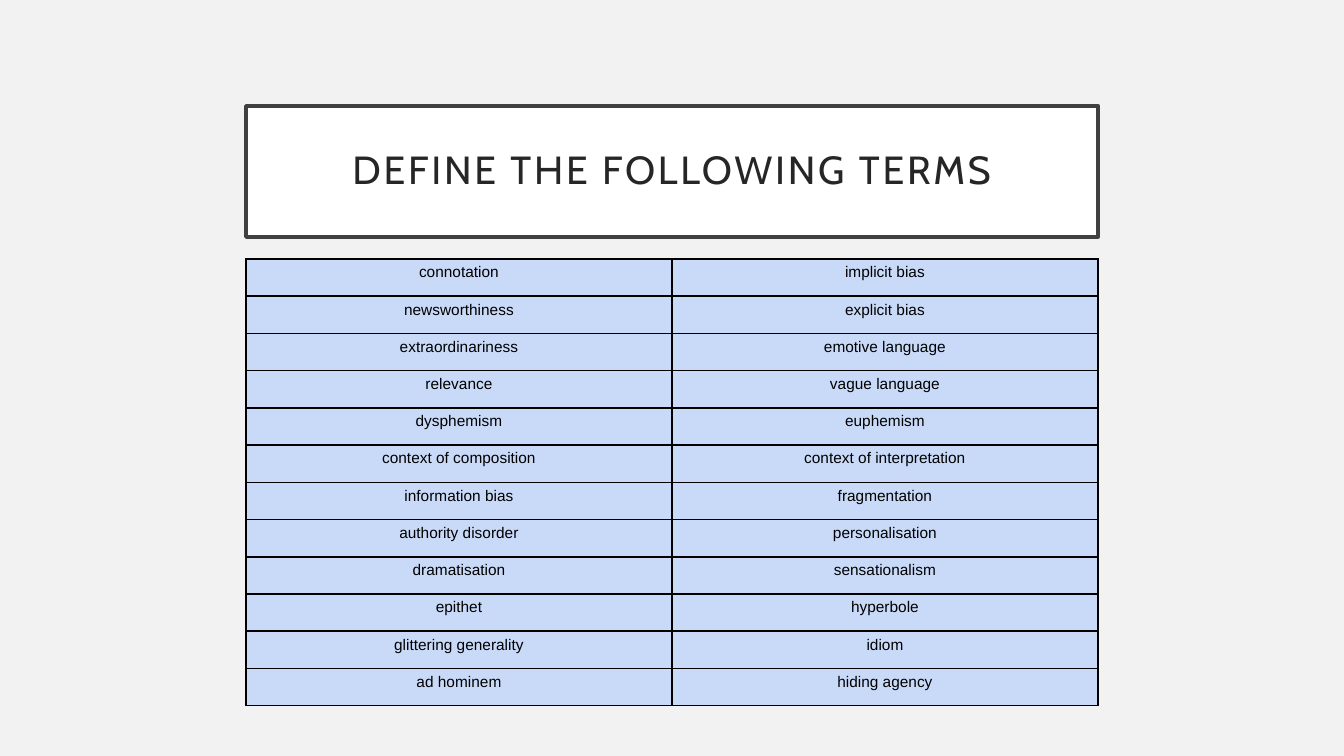
from dataclasses import dataclass

from lxml import etree
from pptx import Presentation
from pptx import util as u
from pptx.dml.color import RGBColor
from pptx.enum import shapes, text
from pptx.oxml import ns

EMU_PER_PX = 914400 / 100.8


def px(n):
    return u.Emu(round(n * EMU_PER_PX))


@dataclass(frozen=True)
class Theme:
    background: str = "F2F2F2"
    title_fill: str = "FFFFFF"
    title_line: str = "404040"
    title_text: str = "262626"
    cell_fill: str = "C9DAF8"
    cell_text: str = "000000"
    cell_border: str = "000000"
    title_font: str = "Cabin"
    cell_font: str = "Arial"
    title_size: float = 28
    cell_size: float = 11
    title_line_width: float = 2.5
    border_width: float = 1.2


class SlideBuilder:
    def __init__(self, prs, theme):
        self.theme = theme
        self.slide = prs.slides.add_slide(prs.slide_layouts[6])
        self.fill(self.slide.background, theme.background)

    def apply(self, target, formats):
        for name, value in formats.items():
            setattr(target, name, value)

    def fill(self, target, color):
        target.fill.solid()
        target.fill.fore_color.rgb = RGBColor.from_string(color)

    def margins(self, n):
        sides = ("left", "right", "top", "bottom")
        return {f"margin_{side}": px(n) for side in sides}

    def add_words(self, tf, words, size, font, color):
        p = tf.paragraphs[0]
        p.alignment = text.PP_ALIGN.CENTER
        r = p.add_run()
        r.text = words
        self.apply(r.font, {"size": u.Pt(size), "name": font})
        r.font.color.rgb = RGBColor.from_string(color)
        return p, r

    def title(self, words, x, y, w, h):
        t = self.theme
        sp = self.slide.shapes.add_shape(
            shapes.MSO_SHAPE.RECTANGLE, px(x), px(y), px(w), px(h))
        sp.shadow.inherit = False
        self.fill(sp, t.title_fill)
        sp.line.color.rgb = RGBColor.from_string(t.title_line)
        sp.line.width = u.Pt(t.title_line_width)
        tf = sp.text_frame
        self.apply(tf, {"word_wrap": True,
                        "vertical_anchor": text.MSO_ANCHOR.MIDDLE,
                        **self.margins(20)})
        p, r = self.add_words(tf, words, t.title_size, t.title_font,
                              t.title_text)
        p.line_spacing = 0.9
        r.font._element.set("spc", "200")

    def border(self, cell):
        tc_pr = cell._tc.get_or_add_tcPr()
        for side in ("lnL", "lnR", "lnT", "lnB"):
            ln = etree.SubElement(tc_pr, ns.qn(f"a:{side}"),
                                  w=str(u.Pt(self.theme.border_width)))
            solid = etree.SubElement(ln, ns.qn("a:solidFill"))
            etree.SubElement(solid, ns.qn("a:srgbClr"),
                             val=self.theme.cell_border)

    def table(self, rows, x, y, w, h):
        t = self.theme
        table = self.slide.shapes.add_table(
            len(rows), len(rows[0]), px(x), px(y), px(w), px(h)).table
        self.apply(table, {"first_row": False, "horz_banding": False})
        for row, terms in zip(table.rows, rows):
            row.height = px(h / len(rows))
            for cell, term in zip(row.cells, terms):
                self.apply(cell, self.margins(5))
                self.border(cell)
                self.fill(cell, t.cell_fill)
                self.add_words(cell.text_frame, term,
                               t.cell_size, t.cell_font, t.cell_text)


TERMS = [
    ("connotation", "implicit bias"),
    ("newsworthiness", "explicit bias"),
    ("extraordinariness", "emotive language"),
    ("relevance", "vague language"),
    ("dysphemism", "euphemism"),
    ("context of composition", "context of interpretation"),
    ("information bias", "fragmentation"),
    ("authority disorder", "personalisation"),
    ("dramatisation", "sensationalism"),
    ("epithet", "hyperbole"),
    ("glittering generality", "idiom"),
    ("ad hominem", "hiding agency"),
]


def main():
    prs = Presentation()
    prs.slide_width, prs.slide_height = px(1344), px(756)
    s = SlideBuilder(prs, Theme())
    s.title("DEFINE THE FOLLOWING TERMS", 246, 106, 852, 131)
    s.table(TERMS, 246, 259, 852, 447)
    prs.save("out.pptx")


if __name__ == "__main__":
    main()
